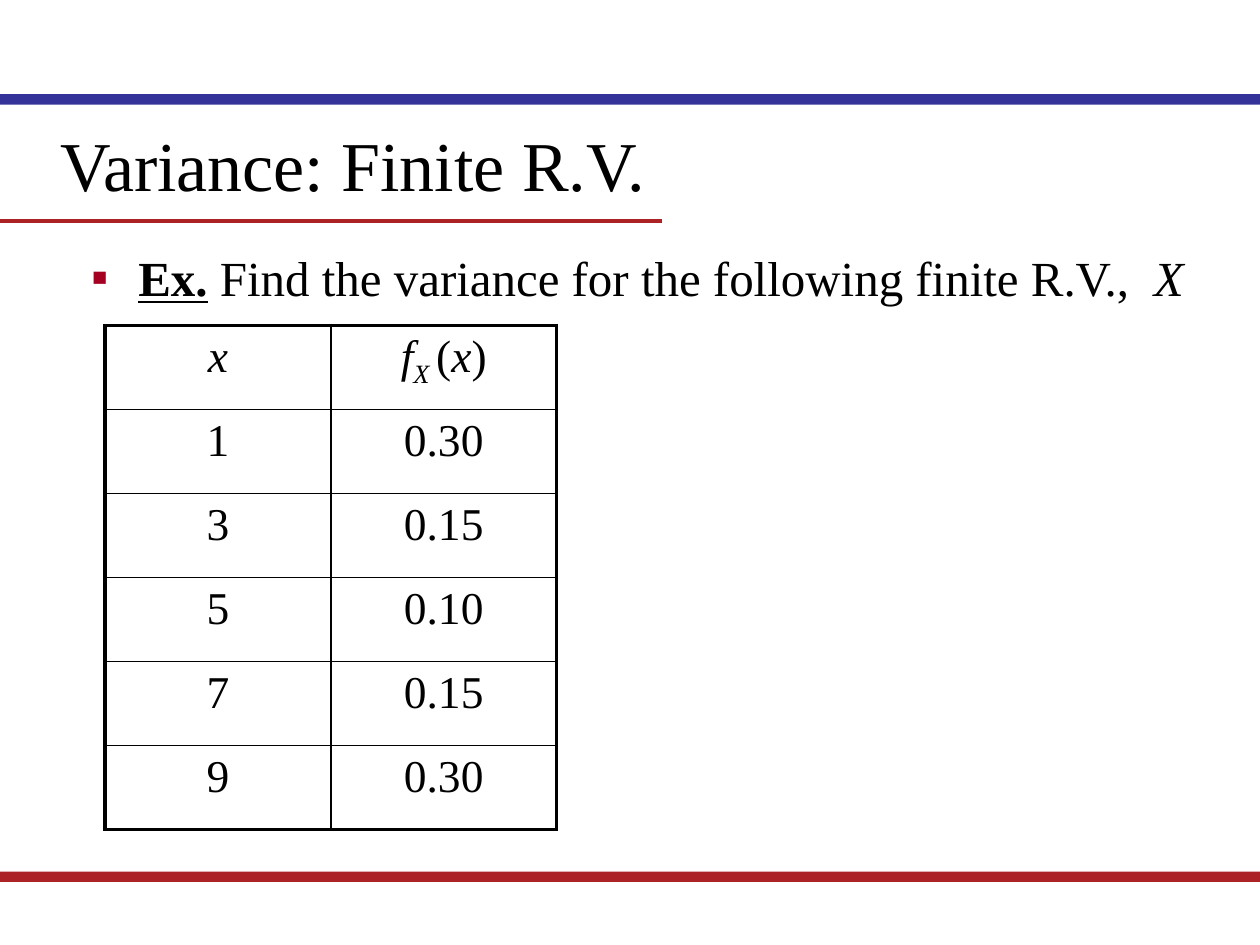
from lxml.etree import SubElement
from pptx import Presentation
from pptx.dml.color import RGBColor
from pptx.enum.shapes import MSO_CONNECTOR, MSO_SHAPE
from pptx.enum.text import MSO_AUTO_SIZE, PP_ALIGN
from pptx.oxml.ns import qn
from pptx.util import Cm, Pt

BLACK = RGBColor(0x00, 0x00, 0x00)
BLUE = RGBColor(0x33, 0x33, 0x99)
RED = RGBColor(0xAC, 0x23, 0x25)
BULLET_RED = RGBColor(0xA5, 0x00, 0x21)
FONT = "Times New Roman"
THIN, THICK = Pt(1), Pt(2.25)

TITLE = [(" Variance: Finite R.V.", "")]
EXERCISE = [
    ("Ex.", "bold underline"),
    (" Find the variance for the following finite R.V.,  ", ""),
    ("X", "italic"),
]
HEADER = [
    [("x", "italic")],
    [("f", "italic"), ("X ", "italic subscript"), ("(", ""), ("x", "italic"), (")", "")],
]
DISTRIBUTION = [("1", "0.30"), ("3", "0.15"), ("5", "0.10"), ("7", "0.15"), ("9", "0.30")]
BARS = [(1.9, BLUE), (17.57, RED)]


def write_runs(paragraph, runs, size):
    for text, style in runs:
        run = paragraph.add_run()
        run.text = text
        font = run.font
        font.name, font.size = FONT, Pt(size)
        font.color.rgb = BLACK
        font.bold = "bold" in style
        font.italic = "italic" in style
        font.underline = "underline" in style
        if "subscript" in style:
            font._element.set("baseline", "-25000")


def space_before(paragraph, percent):
    spacing = SubElement(paragraph._p.get_or_add_pPr(), qn("a:spcBef"))
    SubElement(spacing, qn("a:spcPct"), val=str(percent * 1000))


def add_bullet(paragraph, character, indent):
    properties = paragraph._p.get_or_add_pPr()
    properties.set("marL", str(indent))
    properties.set("indent", str(-indent))
    color = SubElement(properties, qn("a:buClr"))
    SubElement(color, qn("a:srgbClr"), val=str(BULLET_RED))
    SubElement(properties, qn("a:buFont"), typeface=FONT)
    SubElement(properties, qn("a:buChar"), char=character)


def set_borders(cell, widths):
    properties = cell._tc.get_or_add_tcPr()
    for position, (side, width) in enumerate(widths.items()):
        line = properties.makeelement(qn(f"a:ln{side}"), {"w": str(width)})
        fill = SubElement(line, qn("a:solidFill"))
        SubElement(fill, qn("a:srgbClr"), val=str(BLACK))
        properties.insert(position, line)


def add_text(slide, left, top, width, height):
    frame = slide.shapes.add_textbox(Cm(left), Cm(top), Cm(width), Cm(height)).text_frame
    frame.word_wrap = True
    return frame


def add_bars(slide):
    for top, color in BARS:
        bar = slide.shapes.add_shape(MSO_SHAPE.RECTANGLE, 0, Cm(top), Cm(25.4), Cm(0.21))
        bar.shadow.inherit = False
        bar.fill.solid()
        bar.fill.fore_color.rgb = color
        bar.line.fill.background()


def add_title(slide):
    underline = slide.shapes.add_connector(
        MSO_CONNECTOR.STRAIGHT, 0, Cm(4.45), Cm(13.34), Cm(4.45))
    underline.line.color.rgb = RED
    underline.line.width = THICK
    SubElement(underline._element.spPr, qn("a:effectLst"))
    frame = add_text(slide, 0.64, 2.33, 23.07, 1.96)
    frame.auto_size = MSO_AUTO_SIZE.SHAPE_TO_FIT_TEXT
    write_runs(frame.paragraphs[0], TITLE, 40)


def add_exercise(slide):
    paragraph = add_text(slide, 1.59, 4.87, 22.99, 11.85).paragraphs[0]
    space_before(paragraph, 20)
    add_bullet(paragraph, "▪", Cm(0.95))
    write_runs(paragraph, EXERCISE, 28)


def add_distribution(slide):
    rows = [HEADER] + [[[(value, "")] for value in row] for row in DISTRIBUTION]
    last_row, last_column = len(rows) - 1, len(HEADER) - 1
    table = slide.shapes.add_table(
        len(rows), len(HEADER), Cm(2.12), Cm(6.56), Cm(9.1), Cm(10.16)).table
    table.first_row = table.horz_banding = False
    for row, contents in enumerate(rows):
        for column, runs in enumerate(contents):
            cell = table.cell(row, column)
            cell.fill.background()
            set_borders(cell, {
                "L": THICK if column == 0 else THIN,
                "R": THICK if column == last_column else THIN,
                "T": THICK if row == 0 else THIN,
                "B": THICK if row == last_row else THIN,
            })
            paragraph = cell.text_frame.paragraphs[0]
            paragraph.alignment = PP_ALIGN.CENTER
            space_before(paragraph, 20)
            write_runs(paragraph, runs, 26)


def main():
    presentation = Presentation()
    presentation.slide_width, presentation.slide_height = Cm(25.4), Cm(19.05)
    slide = presentation.slides.add_slide(presentation.slide_layouts[6])
    add_bars(slide)
    add_title(slide)
    add_exercise(slide)
    add_distribution(slide)
    presentation.save("out.pptx")


if __name__ == "__main__":
    main()
